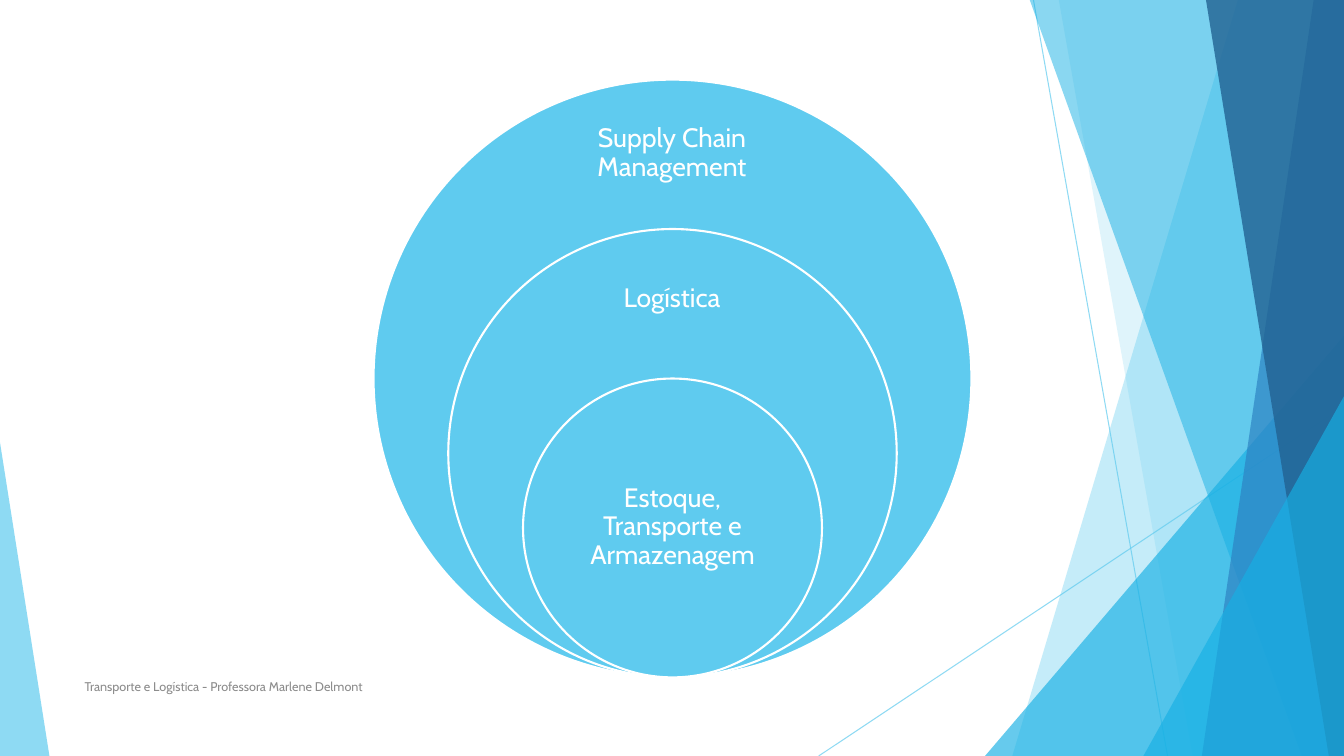
from dataclasses import dataclass

import pptx
import pptx.dml.color
import pptx.enum.shapes
import pptx.enum.text
import pptx.oxml
import pptx.oxml.ns
import pptx.util

Inches = pptx.util.Inches
Pt = pptx.util.Pt
RGBColor = pptx.dml.color.RGBColor
SHAPE = pptx.enum.shapes.MSO_SHAPE
ALIGN = pptx.enum.text.PP_ALIGN
ANCHOR = pptx.enum.text.MSO_ANCHOR
qn = pptx.oxml.ns.qn

SKY = RGBColor(0x5F, 0xCB, 0xEF)
CYAN = RGBColor(0x17, 0xB0, 0xE4)
BLUE = RGBColor(0x2E, 0x83, 0xC3)
NAVY = RGBColor(0x22, 0x62, 0x92)
WHITE = RGBColor(0xFF, 0xFF, 0xFF)
GRAY = RGBColor(0x8C, 0x8C, 0x8C)

WIDTH, HEIGHT = 13.33, 7.5
TOP = -0.01
CENTER_X, RINGS_BOTTOM, OUTER_DIAMETER = 6.67, 6.72, 5.93


@dataclass
class Ray:
    start: tuple[float, float]
    end: tuple[float, float]


@dataclass
class Band:
    top_x: float
    bottom_x: float
    color: RGBColor
    opacity: int


@dataclass
class Corner:
    left: float
    top: float
    width: float
    apex: float
    color: RGBColor
    opacity: int


@dataclass
class Label:
    text: str
    left: float
    top: float
    width: float
    height: float
    size: float
    color: RGBColor
    para: dict
    margin: float | None = None


@dataclass
class Ring:
    scale: float
    label: Label


RAYS = [Ray((10.25, 0), (11.58, HEIGHT)), Ray((WIDTH, 4.03), (8.12, HEIGHT))]
FACETS = [
    Band(12.28, 10.04, SKY, 36),
    Band(10.5, 11.83, SKY, 20),
    Corner(9.77, 3.33, 3.56, 1, CYAN, 66),
    Band(10.21, 12.91, CYAN, 50),
    Band(13.03, 11.92, BLUE, 70),
    Band(11.96, 13.18, NAVY, 80),
    Corner(11.34, 3.93, 1.99, 1, CYAN, 66),
    Corner(0, 4.39, 0.49, 0, SKY, 70),
]
RING_PARA = {"alignment": ALIGN.CENTER, "line_spacing": 0.9, "space_after": Pt(6.65)}


def ring_label(text: str, left: float, top: float, width: float, height: float) -> Label:
    return Label(text, left, top, width, height, 19, WHITE, RING_PARA, 0.15)


RINGS = [
    Ring(1, ring_label("Supply Chain Management", 5.63, 1.08, 2.07, 0.89)),
    Ring(0.75, ring_label("Logística", 5.63, 2.55, 2.07, 0.83)),
    Ring(0.5, ring_label("Estoque, Transporte e Armazenagem", 5.62, 4.49, 2.1, 1.48)),
]
FOOTER = Label("Transporte e Logística - Professora Marlene Delmont",
               0.74, 6.61, 6.89, 0.4, 9, GRAY, {"alignment": ALIGN.LEFT})


def set_opacity(sp, percent: int) -> None:
    for clr in sp._element.spPr.iter(qn("a:srgbClr")):
        alpha = pptx.oxml.parse_xml(
            f'<a:alpha {pptx.oxml.ns.nsdecls("a")} val="{percent * 1000}"/>')
        clr.append(alpha)


def paint(sp, color: RGBColor) -> None:
    sp.shadow.inherit = False
    sp.fill.solid()
    sp.fill.fore_color.rgb = color


def draw_ray(s, ray: Ray) -> None:
    ends = [Inches(v) for v in (*ray.start, *ray.end)]
    cxn = s.shapes.add_connector(pptx.enum.shapes.MSO_CONNECTOR.STRAIGHT, *ends)
    cxn.line.color.rgb = SKY
    cxn.line.width = Pt(0.75)
    set_opacity(cxn, 70)
    effects = f'<a:effectLst {pptx.oxml.ns.nsdecls("a")}/>'
    cxn._element.spPr.append(pptx.oxml.parse_xml(effects))


def draw_facet(s, facet: Band | Corner) -> None:
    if isinstance(facet, Band):
        outline = [(facet.top_x, TOP), (WIDTH, TOP), (WIDTH, HEIGHT), (facet.bottom_x, HEIGHT)]
        (x, y), *rest = [(Inches(px), Inches(py)) for px, py in outline]
        builder = s.shapes.build_freeform(x, y)
        builder.add_line_segments(rest, close=True)
        sp = builder.convert_to_shape()
    else:
        sp = s.shapes.add_shape(
            SHAPE.ISOSCELES_TRIANGLE, Inches(facet.left), Inches(facet.top),
            Inches(facet.width), Inches(HEIGHT - facet.top))
        sp.adjustments[0] = facet.apex
    paint(sp, facet.color)
    sp.line.fill.background()
    set_opacity(sp, facet.opacity)


def draw_label(s, label: Label) -> None:
    box = [Inches(v) for v in (label.left, label.top, label.width, label.height)]
    tf = s.shapes.add_textbox(*box).text_frame
    frame = {"word_wrap": True, "vertical_anchor": ANCHOR.MIDDLE}
    if label.margin is not None:
        for side in ("left", "right", "top", "bottom"):
            frame[f"margin_{side}"] = Inches(label.margin)
    p = tf.paragraphs[0]
    r = p.add_run()
    r.text = label.text
    r.font.color.rgb = label.color
    font = {"name": "Cabin", "size": Pt(label.size)}
    for target, values in ((tf, frame), (p, label.para), (r.font, font)):
        for name, value in values.items():
            setattr(target, name, value)


def draw_ring(s, ring: Ring) -> None:
    d = OUTER_DIAMETER * ring.scale
    sp = s.shapes.add_shape(
        SHAPE.OVAL, Inches(CENTER_X - d / 2), Inches(RINGS_BOTTOM - d), Inches(d), Inches(d))
    paint(sp, SKY)
    sp.line.color.rgb = WHITE
    sp.line.width = Pt(1.5)
    draw_label(s, ring.label)


def main() -> None:
    prs = pptx.Presentation()
    prs.slide_width = Inches(WIDTH)
    prs.slide_height = Inches(HEIGHT)
    s = prs.slides.add_slide(prs.slide_layouts[6])
    for ray in RAYS:
        draw_ray(s, ray)
    for facet in FACETS:
        draw_facet(s, facet)
    for ring in RINGS:
        draw_ring(s, ring)
    draw_label(s, FOOTER)
    prs.save("out.pptx")


if __name__ == "__main__":
    main()
